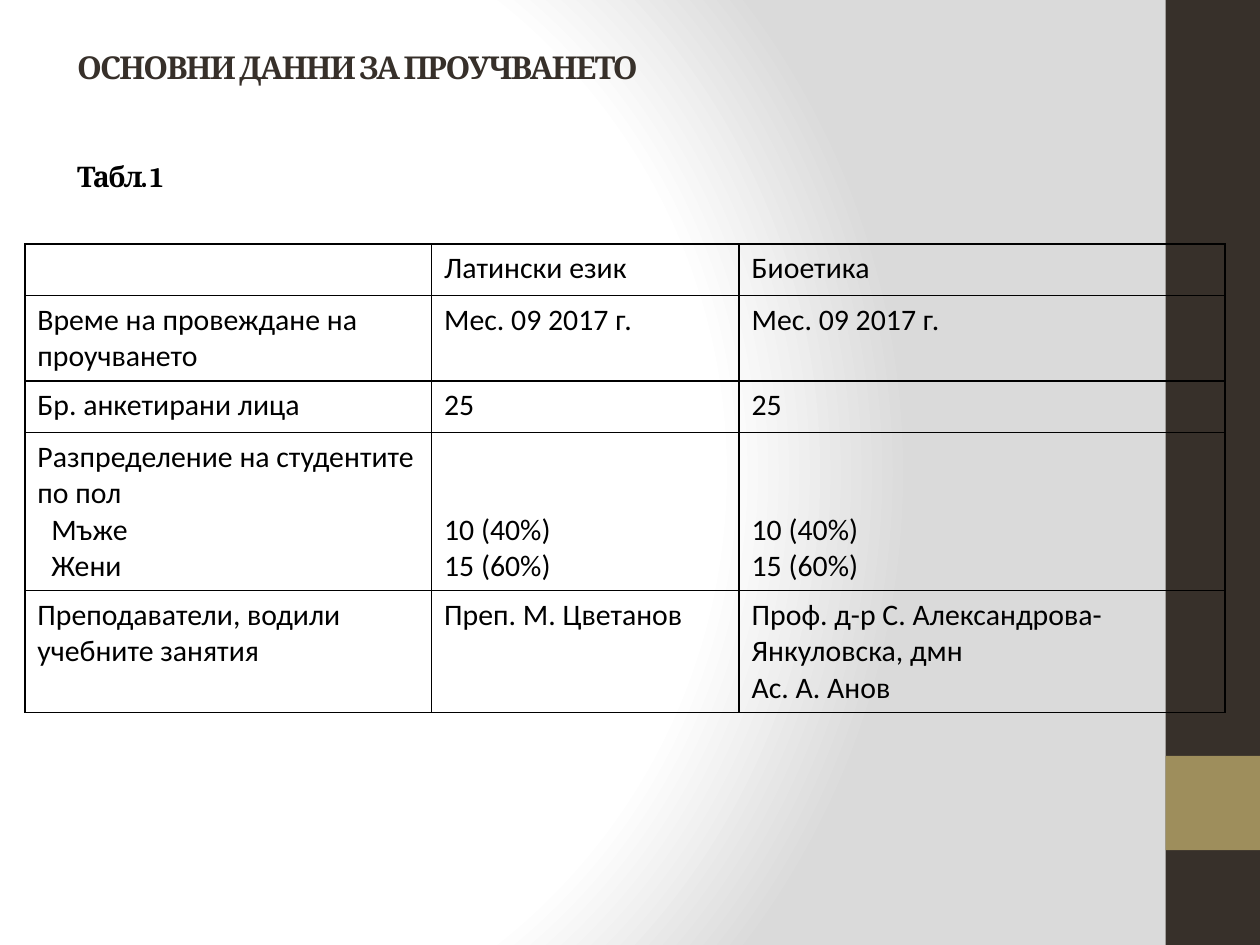
from lxml import etree
from pptx import Presentation
from pptx.dml.color import RGBColor
from pptx.enum.shapes import MSO_SHAPE
from pptx.enum.text import MSO_ANCHOR, PP_ALIGN
from pptx.oxml import parse_xml
from pptx.oxml.ns import nsdecls, qn
from pptx.util import Cm, Pt

RECT = MSO_SHAPE.RECTANGLE
TOP, MIDDLE, BOTTOM = MSO_ANCHOR.TOP, MSO_ANCHOR.MIDDLE, MSO_ANCHOR.BOTTOM
LEFT = PP_ALIGN.LEFT

DARK = RGBColor(0x37, 0x30, 0x2A)
GOLD = RGBColor(0x9E, 0x8E, 0x5C)
BLACK = RGBColor(0, 0, 0)
WHITE = RGBColor(0xFF, 0xFF, 0xFF)
GREY = RGBColor(0xDA, 0xDA, 0xDA)

COLUMNS = (8.2, 6.2, 9.8)
ROW_HEIGHT = 1.04
GENDER_COUNTS = ["10 (40%)", "15 (60%)"]
GENDER_ROW = 3
ROWS = [
    [[], ["Латински език"], ["Биоетика"]],
    [["Време на провеждане на проучването"], ["Мес. 09 2017 г."], ["Мес. 09 2017 г."]],
    [["Бр. анкетирани лица"], ["25"], ["25"]],
    [["Разпределение на студентите по пол", "Мъже", "Жени"], GENDER_COUNTS, GENDER_COUNTS],
    [["Преподаватели, водили учебните занятия"], ["Преп. М. Цветанов"],
     ["Проф. д-р С. Александрова-Янкуловска, дмн", "Ас. А. Анов"]],
]


def write(p, text, font="Calibri", size=17, color=BLACK, bold=False,
          spacing=0, before=0, indent=0):
    """Fill a paragraph; spacing is in points between letters, indent in cm."""
    p.alignment = LEFT
    p.space_before = Pt(before)
    if indent:
        p._p.get_or_add_pPr().set("marL", str(Cm(indent)))
    r = p.add_run()
    r.text = text
    r.font.name, r.font.size, r.font.bold = font, Pt(size), bold
    r.font.color.rgb = color
    if spacing:
        r._r.get_or_add_rPr().set("spc", str(spacing * 100))


def add_borders(cell, color=BLACK, width=1):
    tcPr = cell._tc.get_or_add_tcPr()
    for side in ("lnL", "lnR", "lnT", "lnB"):
        ln = etree.SubElement(tcPr, qn(f"a:{side}"), w=str(Pt(width)))
        fill = etree.SubElement(ln, qn("a:solidFill"))
        etree.SubElement(fill, qn("a:srgbClr"), val=str(color))


class Deck:
    def __init__(self, width, height):
        self.prs = Presentation()
        self.prs.slide_width, self.prs.slide_height = Cm(width), Cm(height)
        self.s = self.prs.slides.add_slide(self.prs.slide_layouts[5])

    def background(self, stops):
        """Circular gradient; stops are (percent, colour) pairs."""
        gs = "".join(f'<a:gs pos="{pos * 1000}"><a:srgbClr val="{color}"/></a:gs>'
                     for pos, color in stops)
        self.s._element.cSld.insert(0, parse_xml(
            f'<p:bg {nsdecls("p", "a")}><p:bgPr><a:gradFill rotWithShape="1">'
            f'<a:gsLst>{gs}</a:gsLst><a:path path="circle">'
            '<a:fillToRect l="20000" t="50000" r="100000" b="50000"/></a:path>'
            '</a:gradFill><a:effectLst/></p:bgPr></p:bg>'))

    def panel(self, x, y, w, h, color):
        sp = self.s.shapes.add_shape(RECT, Cm(x), Cm(y), Cm(w), Cm(h))
        sp.shadow.inherit = False
        sp.fill.solid()
        sp.fill.fore_color.rgb = color
        sp.line.fill.background()

    def title(self, x, y, w, h, heading, caption):
        sp = self.s.shapes.title
        sp.left, sp.top, sp.width, sp.height = Cm(x), Cm(y), Cm(w), Cm(h)
        tf = sp.text_frame
        tf.word_wrap, tf.vertical_anchor = True, MIDDLE
        style = {"font": "Cambria", "bold": True, "spacing": -1}
        write(tf.paragraphs[0], heading, size=18, color=DARK, **style)
        write(tf.add_paragraph(), caption, size=16.2, before=42, **style)

    def cell(self, cell, lines, anchor, indent):
        """Indent applies to the lines after the first."""
        add_borders(cell)
        cell.fill.background()
        cell.vertical_anchor = anchor
        tf = cell.text_frame
        for i, text in enumerate(lines):
            p = tf.add_paragraph() if i else tf.paragraphs[0]
            write(p, text, indent=indent if i else 0)

    def table(self, x, y, columns, rows):
        frame = self.s.shapes.add_table(len(rows), len(columns), Cm(x), Cm(y),
                                        Cm(sum(columns)), Cm(ROW_HEIGHT * len(rows)))
        table = frame.table
        table.first_row = table.horz_banding = False
        for column, width in zip(table.columns, columns):
            column.width = Cm(width)
        for i, row in enumerate(rows):
            table.rows[i].height = Cm(ROW_HEIGHT)
            for j, lines in enumerate(row):
                gender = i == GENDER_ROW
                self.cell(table.cell(i, j), lines,
                          anchor=BOTTOM if gender and j else TOP,
                          indent=0.28 if gender and not j else 0)


def main():
    deck = Deck(25.4, 19.05)
    deck.background([(0, WHITE), (75, WHITE), (100, GREY)])
    deck.panel(23.5, 0, 1.9, 19.05, DARK)
    deck.panel(23.5, 15.24, 1.9, 1.9, GOLD)
    deck.title(1.3, 0.76, 21.13, 3.35, "ОСНОВНИ ДАННИ ЗА ПРОУЧВАНЕТО", "Табл. 1")
    deck.table(0.5, 4.92, COLUMNS, ROWS)
    deck.prs.save("out.pptx")


if __name__ == "__main__":
    main()
